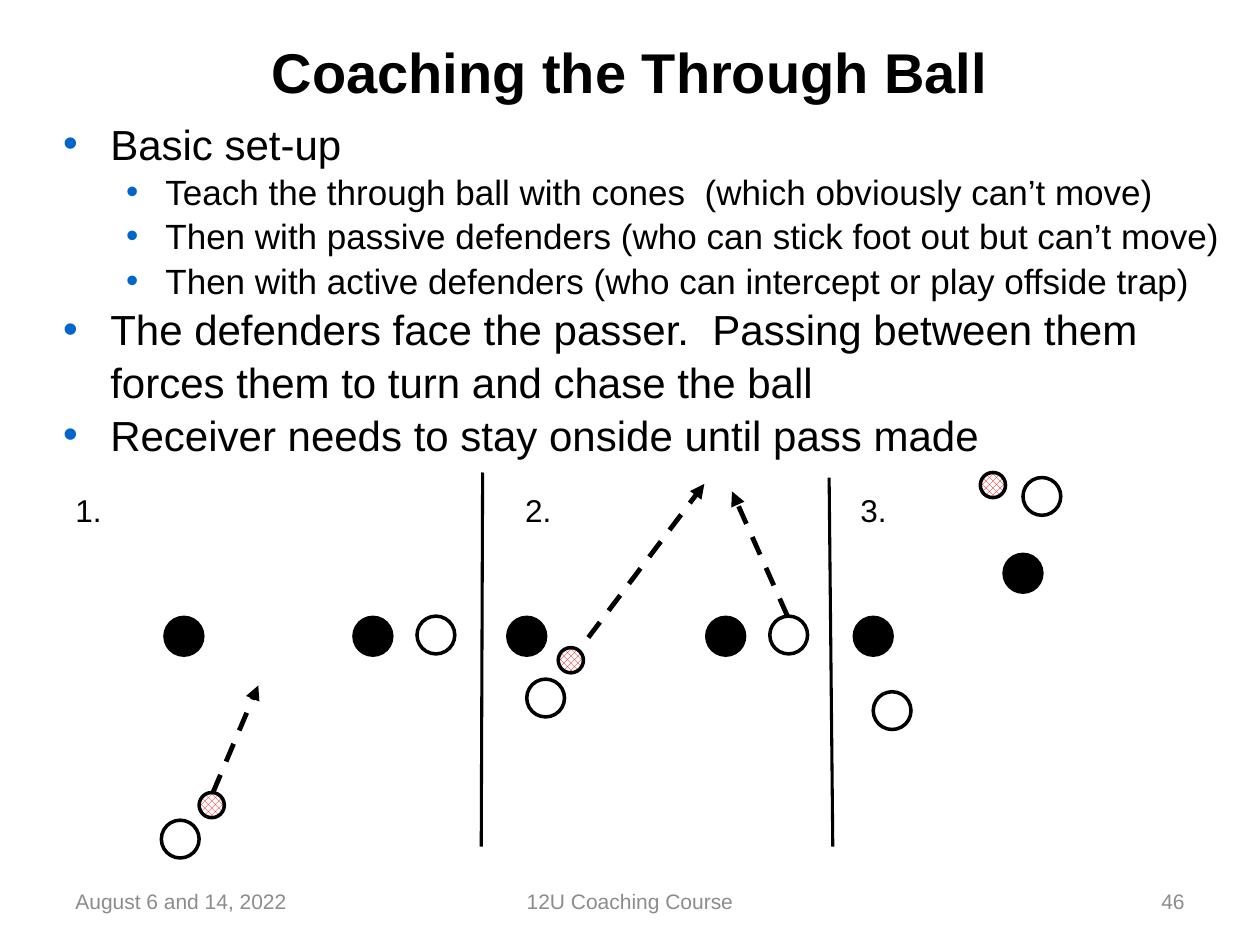
from lxml.etree import SubElement
from pptx import Presentation
from pptx.dml.color import RGBColor
from pptx.enum.dml import MSO_LINE, MSO_PATTERN
from pptx.enum.shapes import MSO_CONNECTOR, MSO_SHAPE
from pptx.enum.text import MSO_ANCHOR, MSO_AUTO_SIZE, PP_ALIGN
from pptx.oxml.ns import qn
from pptx.util import Pt

BLACK = RGBColor(0x00, 0x00, 0x00)
WHITE = RGBColor(0xFF, 0xFF, 0xFF)
RED = RGBColor(0xFF, 0x00, 0x00)
GREY = RGBColor(0x8C, 0x8C, 0x8C)
BULLET_BLUE = RGBColor(0x00, 0x66, 0xCC)

FONT = "Arial"
PLAYER, BALL = 21.6, 14.4  # diameters

# Per level: text size, left margin, hanging indent
LEVELS = [(24, 27, -27), (20, 58.5, -22.5)]
POINTS = [
    (0, "Basic set-up"),
    (1, "Teach the through ball with cones  (which obviously can’t move)"),
    (1, "Then with passive defenders (who can stick foot out but can’t move)"),
    (1, "Then with active defenders (who can intercept or play offside trap)"),
    (0, "The defenders face the passer.  Passing between them forces them "
        "to turn and chase the ball"),
    (0, "Receiver needs to stay onside until pass made"),
]

# Positions are relative to the top left of each panel
PANELS = [
    dict(label="1.", left=36,
         defenders=[(58.3, 82.8), (166.3, 82.8)],
         attackers=[(202.3, 82.1), (56.2, 198.7)],
         ball=(77.8, 182.9),
         runs=[((85.7, 182.9), (111.6, 121.7))]),
    dict(label="2.", left=293,
         defenders=[(-2.8, 82.8), (110.9, 82.8)],
         attackers=[(8, 118.1), (146.9, 82.1)],
         ball=(26, 100.1),
         runs=[((43.2, 94.3), (109.5, 6.5)), ((157, 82.1), (125.3, 10.8))]),
    dict(label="3.", left=484.6,
         defenders=[(3.6, 82.8), (89.2, 46.8)],
         attackers=[(100, 2.9), (14.4, 125.3)],
         ball=(75.6, 0),
         runs=[]),
]
PANEL_TOP = 270
DIVIDERS = [((275.8, 270), (275, 483.8)), ((473.8, 272.9), (475.9, 483.8))]

FOOTER = [
    (0, 168, PP_ALIGN.LEFT, "August 6 and 14, 2022"),
    (210, 228, PP_ALIGN.CENTER, "12U Coaching Course"),
    (480, 168, PP_ALIGN.RIGHT, "46"),
]


def add_run(paragraph, text, size, color=BLACK, bold=False):
    run = paragraph.add_run()
    run.text = text
    run.font.name = FONT
    run.font.size = Pt(size)
    run.font.bold = bold
    run.font.color.rgb = color


def place(placeholder, left, top, width, height):
    placeholder.left, placeholder.top = Pt(left), Pt(top)
    placeholder.width, placeholder.height = Pt(width), Pt(height)
    frame = placeholder.text_frame
    frame.margin_left = frame.margin_right = 0
    frame.margin_top = frame.margin_bottom = 0
    frame.auto_size = MSO_AUTO_SIZE.NONE
    frame.word_wrap = True
    return frame


def add_bullet(paragraph, level):
    size, margin, indent = LEVELS[level]
    paragraph.level = level
    paragraph.line_spacing = 1.05
    paragraph.space_before = paragraph.space_after = Pt(0)
    properties = paragraph._p.get_or_add_pPr()
    properties.set("marL", str(Pt(margin)))
    properties.set("indent", str(Pt(indent)))
    color = SubElement(properties, qn("a:buClr"))
    SubElement(color, qn("a:srgbClr"), val=str(BULLET_BLUE))
    SubElement(properties, qn("a:buFont"), typeface=FONT)
    SubElement(properties, qn("a:buChar"), char="•")
    return size


def add_line(slide, start, end, width, arrow=False):
    line = slide.shapes.add_connector(
        MSO_CONNECTOR.STRAIGHT, *(Pt(v) for v in (*start, *end)))
    line.line.color.rgb = BLACK
    line.line.width = Pt(width)
    if arrow:
        line.line.dash_style = MSO_LINE.DASH
        SubElement(line.line._get_or_add_ln(), qn("a:tailEnd"), type="triangle")
    SubElement(line._element.spPr, qn("a:effectLst"))


def add_marker(slide, left, top, size):
    marker = slide.shapes.add_shape(
        MSO_SHAPE.FLOWCHART_CONNECTOR, Pt(left), Pt(top), Pt(size), Pt(size))
    marker.shadow.inherit = False
    marker.line.color.rgb = BLACK
    marker.line.width = Pt(2)
    return marker.fill


def add_title(slide, left, top, width, height):
    frame = place(slide.shapes.title, left, top, width, height)
    frame.vertical_anchor = MSO_ANCHOR.MIDDLE
    title = frame.paragraphs[0]
    title.alignment = PP_ALIGN.CENTER
    add_run(title, "Coaching the Through Ball", 32, bold=True)


def add_points(slide, left, top, width, height):
    frame = place(slide.placeholders[1], left, top, width, height)
    frame.vertical_anchor = MSO_ANCHOR.TOP
    for index, (level, text) in enumerate(POINTS):
        point = frame.add_paragraph() if index else frame.paragraphs[0]
        size = add_bullet(point, level)
        add_run(point, text, size)


def add_panel(slide, left, top, label, defenders, attackers, ball, runs):
    def at(point):
        return left + point[0], top + point[1]

    # Players and ball
    for defender in defenders:
        fill = add_marker(slide, *at(defender), PLAYER)
        fill.solid()
        fill.fore_color.rgb = BLACK
    for attacker in attackers:
        add_marker(slide, *at(attacker), PLAYER).background()
    fill = add_marker(slide, *at(ball), BALL)
    fill.patterned()
    fill.pattern = MSO_PATTERN.LARGE_CHECKER_BOARD
    fill.fore_color.rgb = RED
    fill.back_color.rgb = WHITE

    # Movement arrows
    for start, end in runs:
        add_line(slide, at(start), at(end), 2.75, arrow=True)

    # Panel number
    number = slide.shapes.add_textbox(Pt(left), Pt(top + 7.2), Pt(29.5), Pt(28.8))
    number.text_frame.word_wrap = False
    number.text_frame.auto_size = MSO_AUTO_SIZE.SHAPE_TO_FIT_TEXT
    add_run(number.text_frame.paragraphs[0], label, 18)


def add_footer(slide, left, top, height):
    for offset, width, alignment, text in FOOTER:
        note = slide.shapes.add_textbox(
            Pt(left + offset), Pt(top), Pt(width), Pt(height))
        note.text_frame.word_wrap = True
        note.text_frame.vertical_anchor = MSO_ANCHOR.MIDDLE
        paragraph = note.text_frame.paragraphs[0]
        paragraph.alignment = alignment
        add_run(paragraph, text, 12, GREY)


def main():
    deck = Presentation()
    deck.slide_width, deck.slide_height = Pt(720), Pt(540)
    slide = deck.slides.add_slide(deck.slide_layouts[1])
    add_title(slide, 36, 21.6, 648, 38.2)
    add_points(slide, 36, 66.2, 666, 195.8)
    add_footer(slide, 36, 500.4, 28.8)
    for panel in PANELS:
        add_panel(slide, top=PANEL_TOP, **panel)
    for start, end in DIVIDERS:
        add_line(slide, start, end, 1.75)
    deck.save("out.pptx")


if __name__ == "__main__":
    main()
